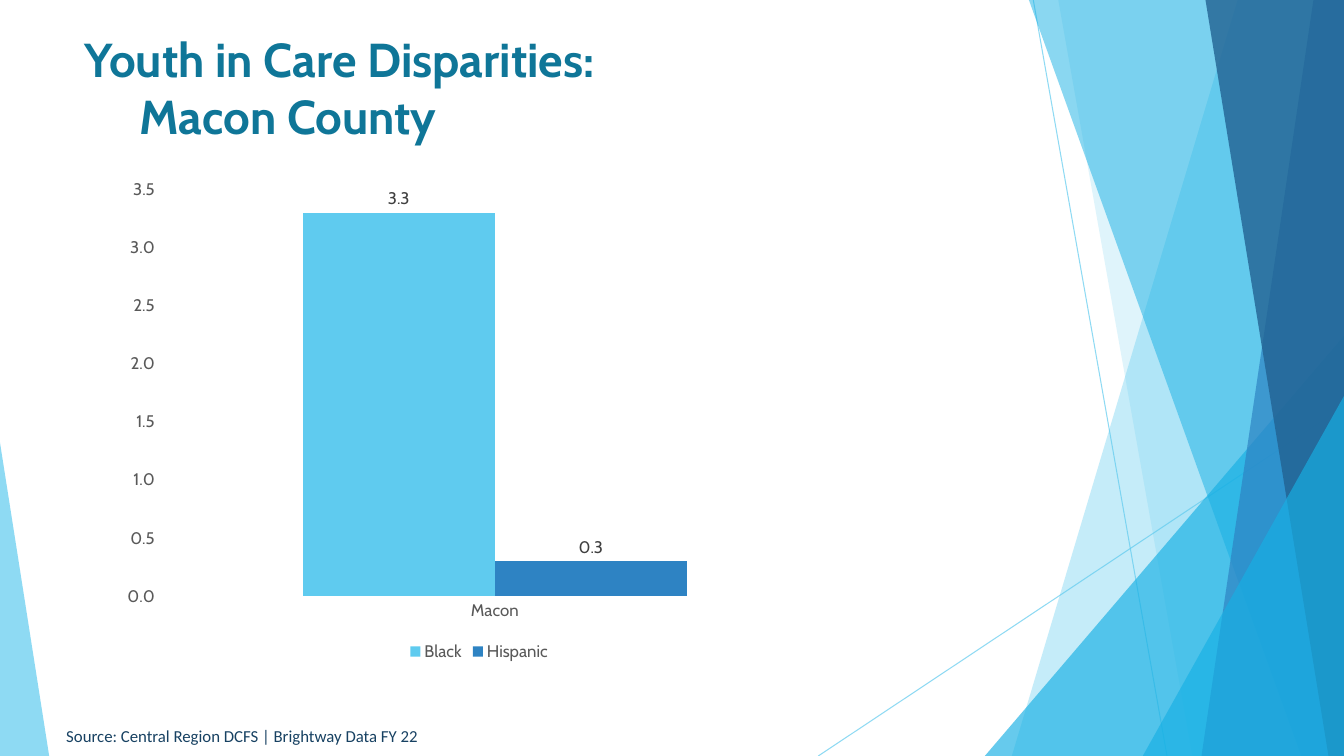
from lxml.etree import SubElement
from pptx import Presentation
from pptx.chart.data import CategoryChartData as ChartData
from pptx.dml.color import RGBColor as RGB
from pptx.enum.chart import XL_CHART_TYPE as Kind, XL_LABEL_POSITION as Spot
from pptx.enum.chart import XL_LEGEND_POSITION as Side, XL_TICK_MARK as Tick
from pptx.enum.shapes import MSO_CONNECTOR as Link, MSO_SHAPE as Shape
from pptx.enum.text import MSO_ANCHOR as Anchor, MSO_AUTO_SIZE as Fit, PP_ALIGN as Align
from pptx.oxml.ns import qn
from pptx.util import Cm, Pt

HUES = {"sky": "5FCBEF", "cyan": "17B0E4", "blue": "2E83C3", "navy": "226292",
        "title": "0F7698", "source": "174162", "axis": "595959", "label": "404040"}
WIDE, HIGH = 33.87, 19.05


def put(item, **form):
    """Set each named attribute of an item."""
    for name, value in form.items():
        setattr(item, name, value)


def style(font, hue, size, face="Cabin", bold=False):
    """Format a font."""
    put(font, size=Pt(size), name=face, bold=bold)
    font.color.rgb = RGB.from_string(HUES[hue])


def fade(fill, hue, alpha):
    """Give a fill a colour and an opacity in percent."""
    fill.solid()
    fill.fore_color.rgb = RGB.from_string(HUES[hue])
    tint = fill._xPr.find(qn("a:solidFill"))[0]
    SubElement(tint, qn("a:alpha")).set("val", str(alpha * 1000))


def paint(shape, hue, alpha):
    """Fill a shape without outline or shadow."""
    shape.shadow.inherit = False
    shape.line.fill.background()
    fade(shape.fill, hue, alpha)


def ray(slide, box, start, end):
    """Draw a thin line between two points of the box."""
    x, y = box[:2]
    line = slide.shapes.add_connector(
        Link.STRAIGHT, Cm(x + start[0]), Cm(y + start[1]), Cm(x + end[0]), Cm(y + end[1]))
    line.line.width = Pt(0.75)
    fade(line.line.fill, "sky", 70)
    SubElement(line._element.spPr, qn("a:effectLst"))


def sail(slide, box, top, foot, hue, alpha):
    """Draw a full-height panel from a slanted edge to the right side."""
    x, y, wide, high = map(Cm, box)
    form = slide.shapes.build_freeform(Cm(top), 0)
    form.add_line_segments([(wide, 0), (wide, high), (Cm(foot), high)])
    paint(form.convert_to_shape(x, y), hue, alpha)


def wedge(slide, box, peak, hue, alpha):
    """Draw a right-angled triangle that fills the box."""
    shape = slide.shapes.add_shape(Shape.ISOSCELES_TRIANGLE, *map(Cm, box))
    shape.adjustments[0] = peak
    paint(shape, hue, alpha)


def corner(slide, box, left, top):
    """Place a wedge in the lower right corner of the box."""
    x, y, wide, high = box
    wedge(slide, (x + left, y + top, wide - left, high - top), 1, "cyan", 66)


def facets(slide, box):
    """Layer the lines, panels and wedges at the right."""
    wide, high = box[2:]
    ray(slide, box, (5.42, 0), (8.79, high))
    ray(slide, box, (wide, 10.24), (0, high))
    sail(slide, box, 10.57, 4.88, "sky", 36)
    sail(slide, box, 6.05, 9.43, "sky", 20)
    corner(slide, box, 4.2, 8.46)
    sail(slide, box, 5.31, 12.17, "cyan", 50)
    sail(slide, box, 12.48, 9.66, "blue", 70)
    sail(slide, box, 9.76, 12.86, "navy", 80)
    corner(slide, box, 8.18, 9.98)


def place(shape, box):
    """Move a shape to the box."""
    put(shape, **dict(zip(("left", "top", "width", "height"), map(Cm, box))))


def head(slide, box):
    """Write the title with its second line indented."""
    title = slide.shapes.title
    place(title, box)
    frame = title.text_frame
    put(frame, text="Youth in Care Disparities:\vMacon County", word_wrap=True,
        auto_size=Fit.NONE, vertical_anchor=Anchor.MIDDLE)
    para = frame.paragraphs[0]
    para.alignment = Align.LEFT
    props = para._p.get_or_add_pPr()
    props.set("marL", str(Cm(1.38)))
    props.set("indent", str(-Cm(1.38)))
    for run in para.runs:
        style(run.font, "title", 34, bold=True)


def bars(slide, box):
    """Chart the disparity by group."""
    data = ChartData(number_format="0.0")
    data.categories = ["Macon"]
    data.add_series("Black", [3.3])
    data.add_series("Hispanic", [0.3])
    chart = slide.shapes.add_chart(Kind.COLUMN_CLUSTERED, *map(Cm, box), data).chart
    put(chart, has_title=False, has_legend=True)
    style(chart.font, "axis", 12)
    put(chart.legend, position=Side.BOTTOM, include_in_layout=False)
    style(chart.legend.font, "axis", 12)
    for axis in (chart.category_axis, chart.value_axis):
        put(axis, has_major_gridlines=False, major_tick_mark=Tick.NONE,
            minor_tick_mark=Tick.NONE)
        axis.format.line.fill.background()
        style(axis.tick_labels.font, "axis", 12)
    put(chart.value_axis, minimum_scale=0, maximum_scale=3.5, major_unit=0.5)
    put(chart.value_axis.tick_labels, number_format="0.0", number_format_is_linked=False)
    plot = chart.plots[0]
    put(plot, gap_width=150, overlap=0, vary_by_categories=False)
    for series, hue in zip(plot.series, ("sky", "blue")):
        series.format.fill.solid()
        series.format.fill.fore_color.rgb = RGB.from_string(HUES[hue])
        labels = series.data_labels
        put(labels, show_value=True, position=Spot.OUTSIDE_END,
            number_format="0.0", number_format_is_linked=False)
        style(labels.font, "label", 12)


def source(slide, box):
    """Write the source line."""
    frame = slide.shapes.add_textbox(*map(Cm, box)).text_frame
    put(frame, text="Source: Central Region DCFS | Brightway Data FY 22",
        word_wrap=True, auto_size=Fit.SHAPE_TO_FIT_TEXT)
    style(frame.paragraphs[0].runs[0].font, "source", 12, "Calibri")


def main():
    """Build and save the slide."""
    deck = Presentation()
    put(deck, slide_width=Cm(WIDE), slide_height=Cm(HIGH))
    slide = deck.slides.add_slide(deck.slide_layouts[5])
    facets(slide, (20.62, 0, WIDE - 20.62, HIGH))
    wedge(slide, (0, 11.15, 1.24, HIGH - 11.15), 0, "sky", 70)
    head(slide, (1.88, 0.81, 23.88, 2.77))
    bars(slide, (2.84, 4.27, 18.47, 12.5))
    source(slide, (1.42, 18.16, 9.9, 0.76))
    deck.save("out.pptx")


if __name__ == "__main__":
    main()
